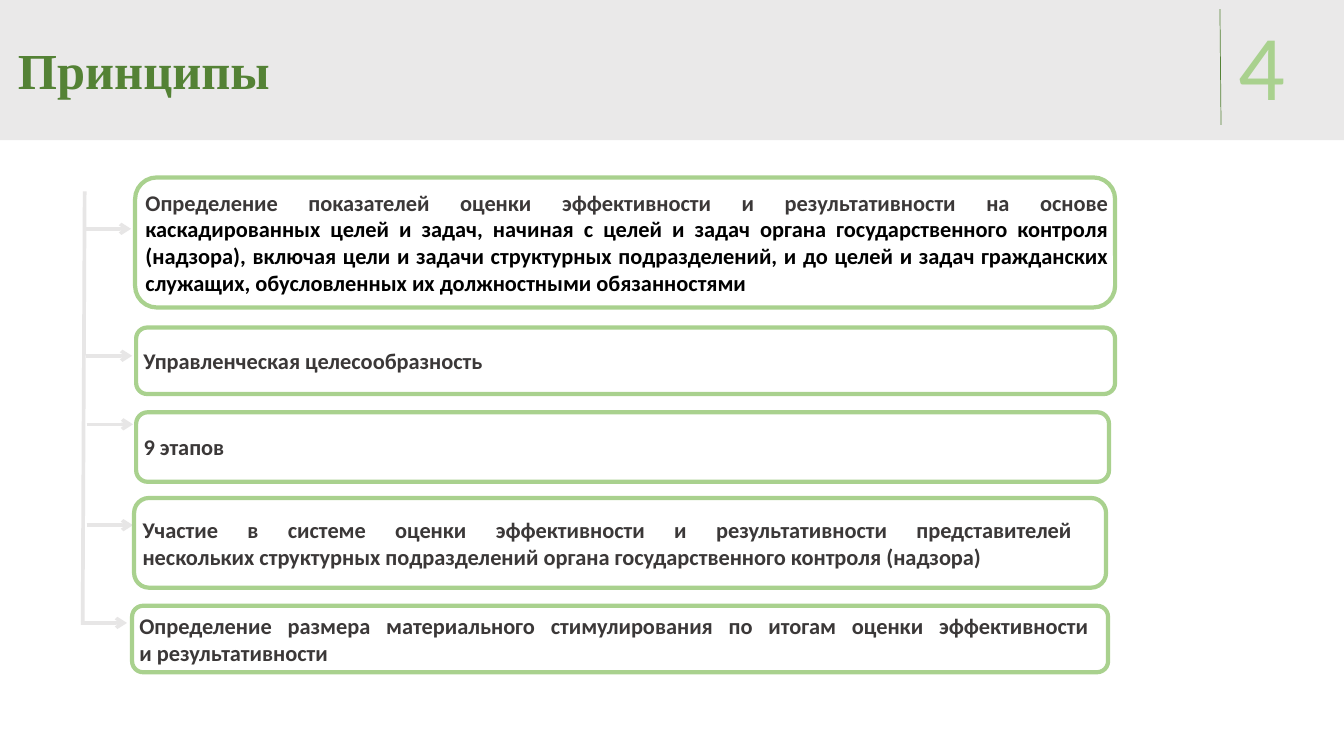
from dataclasses import dataclass

from lxml.etree import SubElement
from pptx import Presentation
from pptx.dml.color import RGBColor
from pptx.enum.shapes import MSO_CONNECTOR as Link, MSO_SHAPE as Preset
from pptx.enum.text import MSO_ANCHOR as Anchor, PP_ALIGN as Align
from pptx.oxml.ns import qn
from pptx.util import Inches, Pt


@dataclass(frozen=True)
class Theme:
    band: str = "AFABAB"
    title: str = "548235"
    accent: str = "A9D18E"
    guide: str = "E7E6E6"
    body: str = "3B3838"
    strong: str = "000000"
    title_font: str = "Times New Roman"
    body_font: str = "Calibri"
    title_size: int = 36
    number_size: int = 66
    body_size: int = 16


THEME = Theme()
WIDTH, HEIGHT = Inches(13.33), Inches(7.5)
COLUMN, ROW = WIDTH / 100, HEIGHT / 100

# Each principle: card (left, top, width, height), arrow start (x, y),
# alignment, text in the body colour, text in the strong colour.
PRINCIPLES = [
    ((4.05, 0.47, 72.92, 17.2), (0.3, 7.27), Align.JUSTIFY,
     "Определение показателей оценки эффективности и результативности на основе ",
     "каскадированных целей и задач, начиная с целей и задач органа государственного "
     "контроля (надзора), включая цели и задачи структурных подразделений, и до целей "
     "и задач гражданских служащих, обусловленных их должностными обязанностями"),
    ((4.13, 20.33, 72.84, 8.8), (0.38, 24.07), Align.LEFT,
     "Управленческая целесообразность", ""),
    ((4.13, 31.53, 72.39, 9.2), (0.45, 33.13), Align.LEFT, "9 этапов", ""),
    ((3.98, 42.87, 72.32, 11.87), (0.45, 46.47), Align.JUSTIFY,
     "Участие в системе оценки эффективности и результативности представителей \n"
     "нескольких структурных подразделений органа государственного контроля (надзора)", ""),
    ((3.83, 57.13, 72.62, 8.8), (0, 59.4), Align.JUSTIFY,
     "Определение размера материального стимулирования по итогам оценки эффективности \n"
     "и результативности", ""),
]
ARROW_LENGTH = 3.45


def place(region, left, top, width, height):
    """Turn grid units inside a region into slide lengths."""
    return (round((region[0] + left) * COLUMN), round((region[1] + top) * ROW),
            round(width * COLUMN), round(height * ROW))


def write(paragraph, text, *, size, color, font=THEME.body_font, bold=False):
    for index, line in enumerate(text.split("\n")):
        if index:
            paragraph.add_line_break()
        run = paragraph.add_run()
        run.text = line
        run.font.size, run.font.bold, run.font.name = Pt(size), bold, font
        run.font.color.rgb = RGBColor.from_string(color)


def prepare(frame, align=Align.LEFT, left=0.0, right=0.0, wrap=True):
    """Set up a text frame and return its first paragraph."""
    frame.word_wrap = wrap
    frame.vertical_anchor = Anchor.MIDDLE
    frame.margin_left, frame.margin_right = Inches(left), Inches(right)
    frame.margin_top = frame.margin_bottom = 0
    frame.paragraphs[0].alignment = align
    return frame.paragraphs[0]


def draw_line(slide, region, start, end, color, weight, arrow=False):
    left, top, across, down = place(region, *start, end[0] - start[0], end[1] - start[1])
    line = slide.shapes.add_connector(Link.STRAIGHT, left, top, left + across, top + down)
    line.line.color.rgb = RGBColor.from_string(color)
    line.line.width = Pt(weight)
    if arrow:
        SubElement(line.line._get_or_add_ln(), qn("a:tailEnd"), type="arrow")
    SubElement(line._element.spPr, qn("a:effectLst"))


def draw_header(slide, region):
    band = slide.shapes.add_shape(Preset.RECTANGLE, *place(region, 0, 0, *region[2:]))
    band.shadow.inherit = False
    band.fill.solid()
    band.fill.fore_color.rgb = RGBColor.from_string(THEME.band)
    tint = band._element.spPr.find(qn("a:solidFill"))[0]
    SubElement(tint, qn("a:alpha"), val="25000")
    band.line.fill.background()

    title = slide.shapes.add_textbox(*place(region, 0.6, 0, 63, 19.33))
    paragraph = prepare(title.text_frame, left=0.1, right=0.1)
    paragraph.line_spacing = 0.9
    write(paragraph, "Принципы", size=THEME.title_size, color=THEME.title,
          font=THEME.title_font, bold=True)

    number = slide.shapes.add_textbox(*place(region, 91.3, 3.07, 4.35, 10.8))
    write(prepare(number.text_frame, Align.RIGHT), "4",
          size=THEME.number_size, color=THEME.accent)
    draw_line(slide, region, (90.77, 1.2), (90.85, 16.53), THEME.title, 0.5)


def draw_card(slide, region, area, align, text, strong_text):
    card = slide.shapes.add_shape(Preset.ROUNDED_RECTANGLE, *place(region, *area))
    card.shadow.inherit = False
    card.fill.background()
    card.line.color.rgb = RGBColor.from_string(THEME.accent)
    card.line.width = Pt(3)
    paragraph = prepare(card.text_frame, align, left=0.04)
    write(paragraph, text, size=THEME.body_size, color=THEME.body, bold=True)
    if strong_text:
        write(paragraph, strong_text, size=THEME.body_size, color=THEME.strong, bold=True)


def draw_principles(slide, region):
    draw_line(slide, region, (0.3, 2.33), (0.15, 59.67), THEME.guide, 2.65)
    for area, (x, y), align, text, strong_text in PRINCIPLES:
        draw_line(slide, region, (x, y), (x + ARROW_LENGTH, y), THEME.guide, 2.5, arrow=True)
        draw_card(slide, region, area, align, text, strong_text)


def main():
    deck = Presentation()
    deck.slide_width, deck.slide_height = WIDTH, HEIGHT
    slide = deck.slides.add_slide(deck.slide_layouts[6])
    draw_header(slide, (0, 0, 100, 18.53))
    draw_principles(slide, (6, 23, 77, 66))
    deck.save("out.pptx")


if __name__ == "__main__":
    main()
